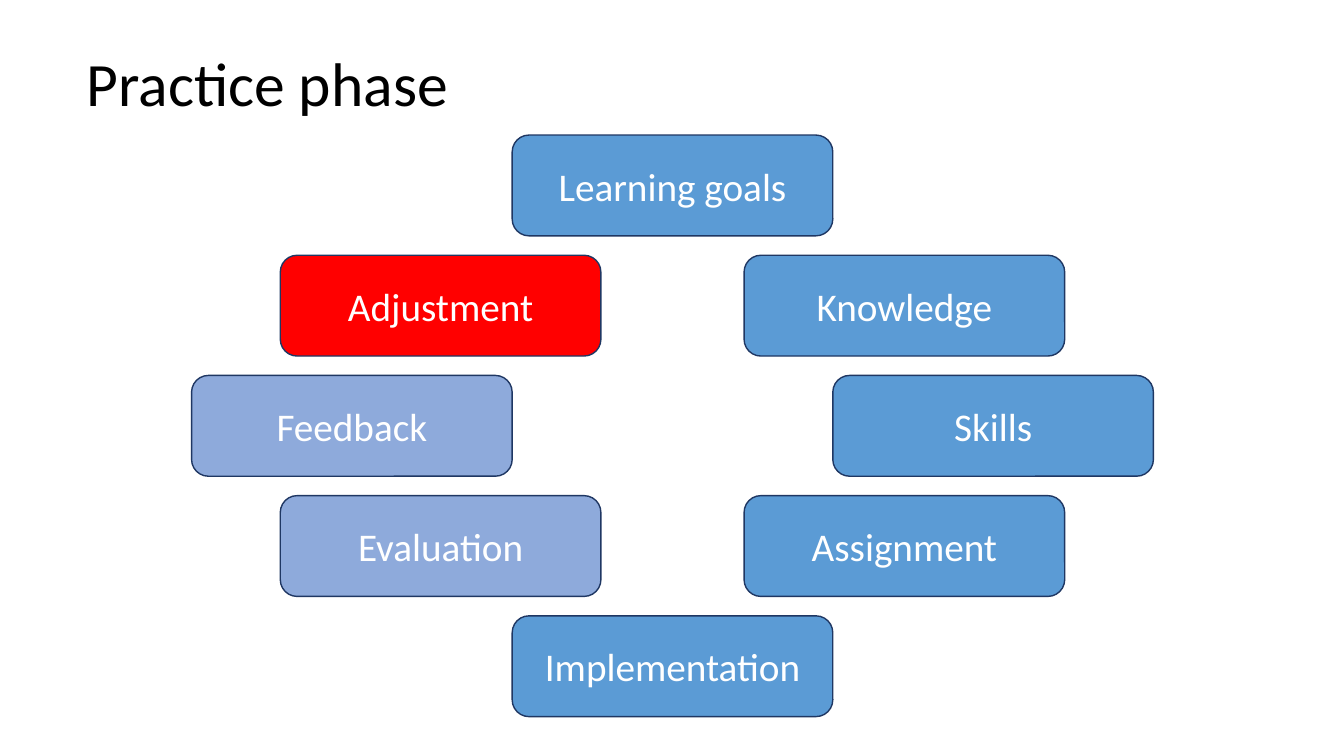
import pptx
import pptx.dml.color
import pptx.enum.shapes
import pptx.enum.text
import pptx.util

Inches = pptx.util.Inches
RGBColor = pptx.dml.color.RGBColor

BLACK = RGBColor(0x00, 0x00, 0x00)
WHITE = RGBColor(0xFF, 0xFF, 0xFF)
BLUE = RGBColor(0x5B, 0x9B, 0xD5)
LAVENDER = RGBColor(0x8E, 0xAA, 0xDB)
RED = RGBColor(0xFF, 0x00, 0x00)
NAVY = RGBColor(0x1F, 0x37, 0x63)

FONT = "Calibri"
SLIDE_WIDTH, SLIDE_HEIGHT = 13.33, 7.5
STEP_WIDTH, STEP_HEIGHT = 3.18, 1
LAST_ROW = 4
COLUMN_OFFSETS = {"far left": -3.18, "left": -2.3, "centre": 0, "right": 2.3, "far right": 3.18}

STEPS = [
    ("Learning goals", 0, "centre", BLUE),
    ("Knowledge", 1, "right", BLUE),
    ("Skills", 2, "far right", BLUE),
    ("Assignment", 3, "right", BLUE),
    ("Implementation", 4, "centre", BLUE),
    ("Evaluation", 3, "left", LAVENDER),
    ("Feedback", 2, "far left", LAVENDER),
    ("Adjustment", 1, "left", RED),
]


def write_text(shape, text, size, color, alignment):
    """Write one vertically centred line of text into a shape."""
    frame = shape.text_frame
    frame.word_wrap = True
    frame.vertical_anchor = pptx.enum.text.MSO_ANCHOR.MIDDLE
    paragraph = frame.paragraphs[0]
    paragraph.alignment = alignment
    run = paragraph.add_run()
    run.text = text
    run.font.name = FONT
    run.font.size = pptx.util.Pt(size)
    run.font.color.rgb = color
    return paragraph


def add_title(slide, text, left, top, width, height):
    """Place the slide title in the given box."""
    box = slide.shapes.add_textbox(Inches(left), Inches(top), Inches(width), Inches(height))
    paragraph = write_text(box, text, 44, BLACK, pptx.enum.text.PP_ALIGN.LEFT)
    paragraph.line_spacing = 0.9


def add_step(slide, text, fill, left, top):
    """Draw one rounded step of the cycle."""
    step = slide.shapes.add_shape(
        pptx.enum.shapes.MSO_SHAPE.ROUNDED_RECTANGLE,
        Inches(left), Inches(top), Inches(STEP_WIDTH), Inches(STEP_HEIGHT),
    )
    step.shadow.inherit = False
    step.fill.solid()
    step.fill.fore_color.rgb = fill
    step.line.color.rgb = NAVY
    step.line.width = pptx.util.Pt(1)
    write_text(step, text, 28, WHITE, pptx.enum.text.PP_ALIGN.CENTER)


def add_cycle(slide, left, top, width, height):
    """Arrange the steps as a ring filling the given box."""
    row_pitch = (height - STEP_HEIGHT) / LAST_ROW
    centre_left = left + (width - STEP_WIDTH) / 2
    for text, row, column, fill in STEPS:
        add_step(slide, text, fill, centre_left + COLUMN_OFFSETS[column], top + row * row_pitch)


def main():
    """Build and save the practice phase slide."""
    presentation = pptx.Presentation()
    presentation.slide_width = Inches(SLIDE_WIDTH)
    presentation.slide_height = Inches(SLIDE_HEIGHT)
    slide = presentation.slides.add_slide(presentation.slide_layouts[6])
    add_title(slide, "Practice phase", 0.76, 0.13, 11.65, 1.45)
    add_cycle(slide, 1.9, 1.34, 3 * STEP_WIDTH, 5.77)
    presentation.save("out.pptx")


if __name__ == "__main__":
    main()
